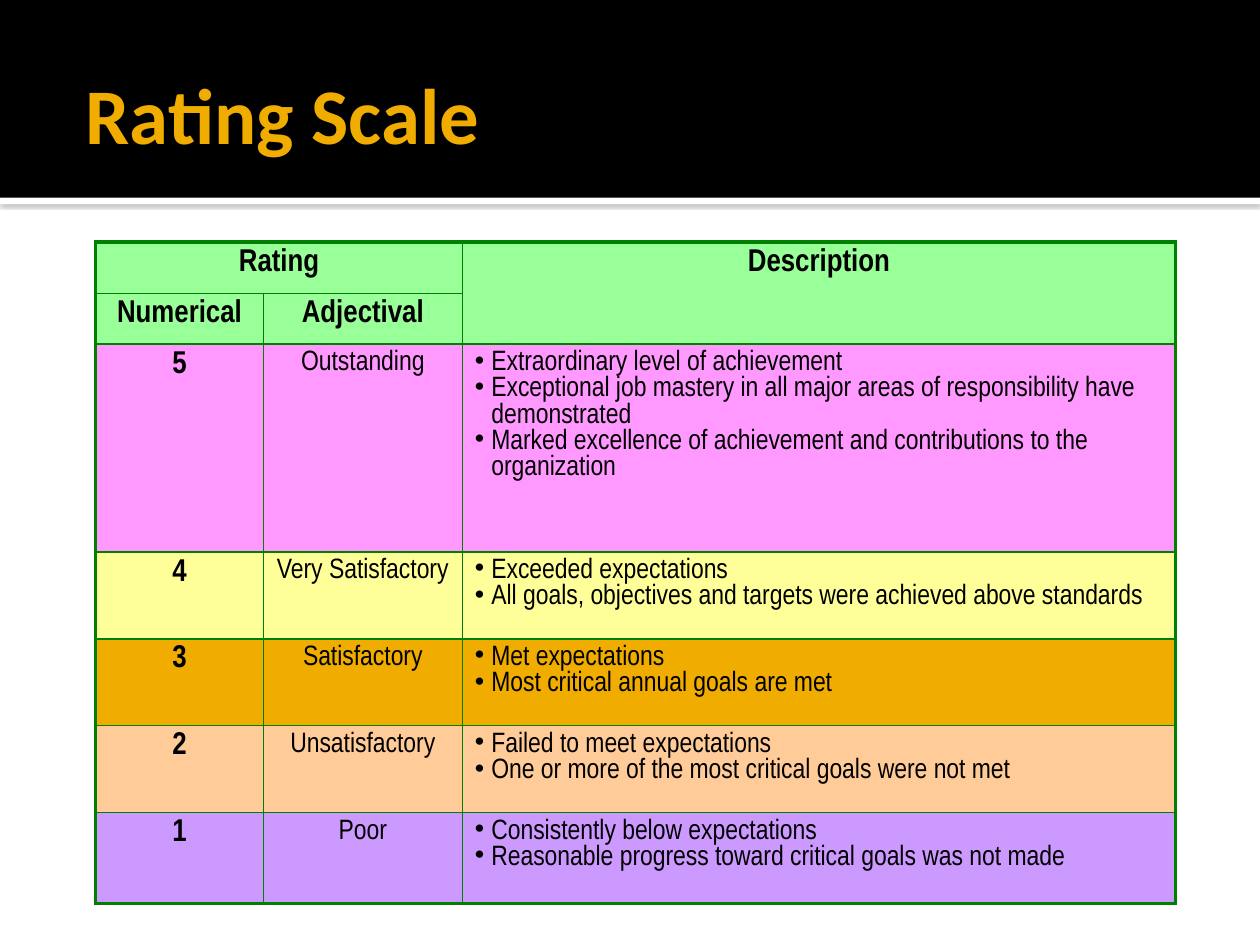
from lxml import etree
from pptx import Presentation
from pptx.dml.color import RGBColor
from pptx.enum.shapes import MSO_SHAPE
from pptx.enum.text import MSO_ANCHOR, PP_ALIGN
from pptx.oxml import parse_xml
from pptx.oxml.ns import nsdecls, qn
from pptx.util import Inches, Pt

GREEN, BLACK, WHITE, GOLD = "008000", "000000", "FFFFFF", "F0AD00"
HEADER_FILL = "99FF99"
COLUMN_WIDTHS = [1.33, 1.58, 5.66]
ROW_HEIGHTS = [0.41, 0.4, 1.65, 0.69, 0.69, 0.69, 0.72]
RATINGS = [
    ("5", "Outstanding", "FF99FF", [
        "Extraordinary level of achievement",
        "Exceptional job mastery in all major areas of responsibility have demonstrated",
        "Marked excellence of achievement and contributions to the organization"]),
    ("4", "Very Satisfactory", "FFFF99", [
        "Exceeded expectations",
        "All goals, objectives and targets were achieved above standards"]),
    ("3", "Satisfactory", GOLD, [
        "Met expectations",
        "Most critical annual goals are met"]),
    ("2", "Unsatisfactory", "FFCC99", [
        "Failed to meet expectations",
        "One or more of the most critical goals were not met"]),
    ("1", "Poor", "CC99FF", [
        "Consistently below expectations",
        "Reasonable progress toward critical goals was not made"]),
]


def rgb(hex_color):
    return RGBColor.from_string(hex_color)


def write(frame, *lines, size=16, bold=False, color=BLACK, font="Arial Narrow",
          align=PP_ALIGN.CENTER, bullet=False):
    for index, line in enumerate(lines):
        paragraph = frame.paragraphs[0] if index == 0 else frame.add_paragraph()
        paragraph.alignment = align
        if bullet:
            properties = paragraph._p.get_or_add_pPr()
            properties.set("marL", str(Inches(0.13)))
            properties.set("indent", str(-Inches(0.13)))
            etree.SubElement(properties, qn("a:buChar"), char="•")
        run = paragraph.add_run()
        run.text = line
        run.font.size = Pt(size)
        run.font.bold = bold
        run.font.name = font
        run.font.color.rgb = rgb(color)


def add_bar(slide, top, height, fill):
    """Full-width bar behind the title."""
    bar = slide.shapes.add_shape(MSO_SHAPE.RECTANGLE, 0, Inches(top),
                                 Inches(10), Inches(height))
    bar.fill.solid()
    bar.fill.fore_color.rgb = rgb(fill)
    bar.line.fill.background()
    bar.shadow.inherit = False
    slide.shapes.title.element.addprevious(bar.element)
    return bar


def add_header(slide, left, top, width, height):
    strip = add_bar(slide, 1.57, 0.05, WHITE)
    effects = strip.element.spPr.find(qn("a:effectLst"))
    effects.append(parse_xml(
        f'<a:outerShdw {nsdecls("a")} blurRad="{Pt(2.5)}" dist="{Pt(0.8)}" '
        'dir="5400000" algn="t" rotWithShape="0"><a:srgbClr val="808080">'
        '<a:alpha val="60000"/></a:srgbClr></a:outerShdw>'))
    add_bar(slide, 0, 1.57, BLACK)

    title = slide.shapes.title
    title.left, title.top = Inches(left), Inches(top)
    title.width, title.height = Inches(width), Inches(height)
    frame = title.text_frame
    frame.vertical_anchor = MSO_ANCHOR.MIDDLE
    frame.margin_left = Inches(0.1)
    frame.margin_right = frame.margin_top = frame.margin_bottom = Inches(0.05)
    write(frame, "Rating Scale", size=45, bold=True, color=GOLD,
          font="Calibri", align=PP_ALIGN.LEFT)


def style_cell(cell, fill, outer_sides):
    """Fill the cell and draw its borders, thicker on the table's outer sides."""
    cell.fill.solid()
    cell.fill.fore_color.rgb = rgb(fill)
    properties = cell._tc.get_or_add_tcPr()
    for index, side in enumerate("LRTB"):
        width = Pt(2.25 if side in outer_sides else 1)
        properties.insert(index, parse_xml(
            f'<a:ln{side} {nsdecls("a")} w="{width}"><a:solidFill>'
            f'<a:srgbClr val="{GREEN}"/></a:solidFill></a:ln{side}>'))


def add_rating_table(slide, left, top):
    rows, columns = len(ROW_HEIGHTS), len(COLUMN_WIDTHS)
    table = slide.shapes.add_table(
        rows, columns, Inches(left), Inches(top),
        Inches(sum(COLUMN_WIDTHS)), Inches(sum(ROW_HEIGHTS))).table
    table.first_row = table.horz_banding = False
    for column, width in zip(table.columns, COLUMN_WIDTHS):
        column.width = Inches(width)
    for row, height in zip(table.rows, ROW_HEIGHTS):
        row.height = Inches(height)

    fills = [HEADER_FILL] * 2 + [fill for _, _, fill, _ in RATINGS]
    for r, fill in enumerate(fills):
        for c in range(columns):
            edges = {"L": c == 0, "R": c == columns - 1,
                     "T": r == 0, "B": r == rows - 1}
            style_cell(table.cell(r, c), fill,
                       [side for side, outer in edges.items() if outer])

    table.cell(0, 0).merge(table.cell(0, 1))
    table.cell(0, 2).merge(table.cell(1, 2))
    headings = {(0, 0): "Rating", (0, 2): "Description",
                (1, 0): "Numerical", (1, 1): "Adjectival"}
    for position, heading in headings.items():
        write(table.cell(*position).text_frame, heading, size=18, bold=True)

    for r, (number, adjective, _, descriptions) in enumerate(RATINGS, start=2):
        write(table.cell(r, 0).text_frame, number, size=18, bold=True)
        write(table.cell(r, 1).text_frame, adjective)
        write(table.cell(r, 2).text_frame, *descriptions,
              align=PP_ALIGN.LEFT, bullet=True)


def main():
    presentation = Presentation()
    presentation.slide_width, presentation.slide_height = Inches(10), Inches(7.5)
    slide = presentation.slides.add_slide(presentation.slide_layouts[5])
    add_header(slide, 0.58, 0.21, 8.92, 1.37)
    add_rating_table(slide, 0.76, 1.92)
    presentation.save("out.pptx")


if __name__ == "__main__":
    main()
